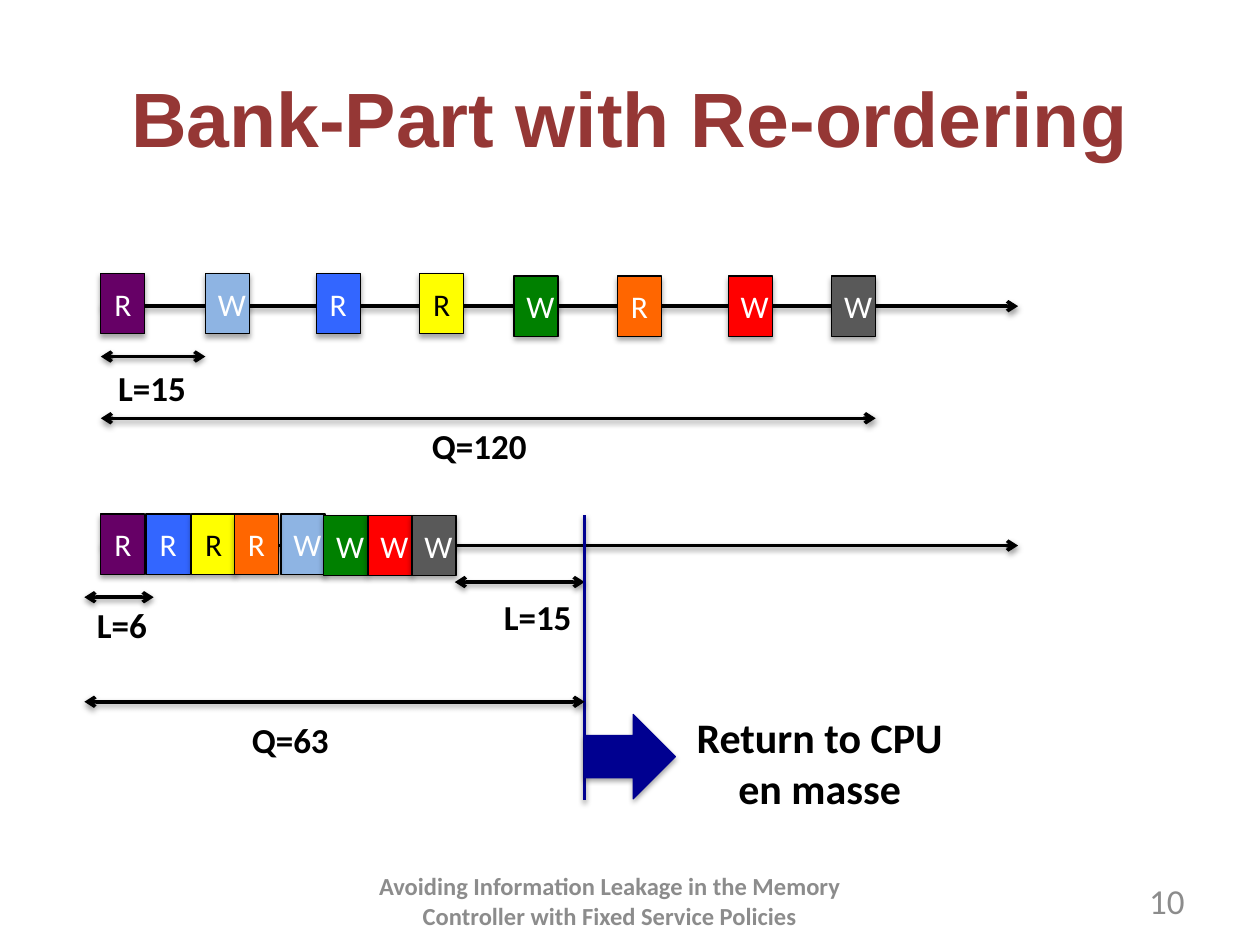
from dataclasses import dataclass
from typing import NamedTuple

from lxml.etree import SubElement
from pptx import Presentation
from pptx.dml.color import RGBColor
from pptx.enum.shapes import MSO_CONNECTOR, MSO_SHAPE
from pptx.enum.text import MSO_ANCHOR, PP_ALIGN
from pptx.oxml.ns import qn
from pptx.util import Inches, Pt


@dataclass(frozen=True)
class Theme:
    black: str = "000000"
    white: str = "FFFFFF"
    title: str = "953735"
    navy: str = "000090"
    gray: str = "8C8C8C"
    purple: str = "660066"
    sky: str = "8EB4E3"
    blue: str = "3366FF"
    yellow: str = "FFFF00"
    green: str = "008000"
    orange: str = "FF6600"
    red: str = "FF0000"
    slate: str = "595959"
    head: str = "Arial"
    body: str = "Calibri"
    title_size: int = 44
    call_size: int = 24
    label_size: int = 20
    slot_size: int = 18
    foot_size: int = 14


T = Theme()


class Slot(NamedTuple):
    x: float
    y: float
    mark: str
    fill: str
    ink: str = T.white


class Arrow(NamedTuple):
    x1: float
    y1: float
    x2: float
    y2: float
    ends: tuple = ("headEnd", "tailEnd")
    color: str = T.black


class Label(NamedTuple):
    x: float
    y: float
    w: float
    h: float
    text: str
    size: int = T.label_size
    color: str = T.black
    bold: bool = True
    align: PP_ALIGN = PP_ALIGN.LEFT
    anchor: MSO_ANCHOR = MSO_ANCHOR.TOP
    wrap: bool = False
    font: str = T.body


SLOT_W, SLOT_H = 0.35, 0.48
LEFT, START, END, RETURN = 0.8, 0.67, 8.08, 4.64
SPREAD_END = 6.95
SPREAD_Y, PACKED_Y = 2.43, 4.33

SPREAD = [
    Slot(LEFT, 2.17, "R", T.purple),
    Slot(1.63, 2.17, "W", T.sky),
    Slot(2.51, 2.17, "R", T.blue),
    Slot(3.33, 2.17, "R", T.yellow, T.black),
    Slot(4.08, 2.19, "W", T.green),
    Slot(4.9, 2.19, "R", T.orange),
    Slot(5.78, 2.19, "W", T.red),
    Slot(6.6, 2.19, "W", T.slate),
]
PACKED_AT = [(LEFT, 4.08), (2.23, 4.08), (1.16, 4.08), (1.52, 4.08),
             (2.57, 4.09), (1.86, 4.08), (2.92, 4.09), (3.27, 4.09)]
PACKED = [slot._replace(x=x, y=y) for slot, (x, y) in zip(SPREAD, PACKED_AT)]

SPANS = [
    Arrow(LEFT, 2.83, 1.63, 2.83),
    Arrow(LEFT, 3.32, SPREAD_END, 3.32),
    Arrow(START, 4.74, 1.22, 4.74),
    Arrow(3.61, 4.62, RETURN, 4.62),
    Arrow(RETURN, 4.09, RETURN, 6.35, (), T.navy),
    Arrow(START, 5.57, RETURN, 5.57),
]

LABELS = [
    Label(0.5, 0.3, 9, 1.25, "Bank-Part with Re-ordering", T.title_size, T.title,
          True, PP_ALIGN.CENTER, MSO_ANCHOR.MIDDLE, True, T.head),
    Label(0.84, 2.86, 0.74, 0.44, "L=15"),
    Label(3.33, 3.32, 0.96, 0.44, "Q=120"),
    Label(START, 4.74, 0.6, 0.44, "L=6"),
    Label(3.9, 4.68, 0.74, 0.44, "L=15"),
    Label(1.9, 5.65, 0.82, 0.44, "Q=63"),
    Label(5.41, 5.6, 2.19, 0.91, "Return to CPU\nen masse", T.call_size,
          align=PP_ALIGN.CENTER),
    Label(7.17, 6.95, 2.33, 0.4, "10", T.label_size, T.gray, False,
          PP_ALIGN.RIGHT, MSO_ANCHOR.MIDDLE, True),
    Label(2.86, 6.95, 3.96, 0.4,
          "Avoiding Information Leakage in the Memory Controller "
          "with Fixed Service Policies", T.foot_size, T.gray, True,
          PP_ALIGN.CENTER, MSO_ANCHOR.MIDDLE, True),
]


def rgb(color: str) -> RGBColor:
    return RGBColor.from_string(color)


def add_shadow(props, dist: float, alpha: int) -> None:
    effects = SubElement(props, qn("a:effectLst"))
    outer = SubElement(effects, qn("a:outerShdw"), blurRad=str(Pt(3.1)),
                       dist=str(Pt(dist)), dir="5400000", rotWithShape="0")
    tint = SubElement(outer, qn("a:srgbClr"), val=T.black)
    SubElement(tint, qn("a:alpha"), val=str(alpha * 1000))


def write(frame, label: Label) -> None:
    frame.text = label.text
    frame.word_wrap = label.wrap
    frame.vertical_anchor = label.anchor
    for para in frame.paragraphs:
        para.alignment = label.align
        font = para.font
        font.name, font.size, font.bold = label.font, Pt(label.size), label.bold
        font.color.rgb = rgb(label.color)


def draw_label(slide, label: Label) -> None:
    box = slide.shapes.add_textbox(*map(Inches, label[:4]))
    write(box.text_frame, label)


def draw_shape(slide, kind: MSO_SHAPE, x: float, y: float, w: float, h: float,
               fill: str, edge: str):
    shape = slide.shapes.add_shape(kind, *map(Inches, (x, y, w, h)))
    shape.fill.solid()
    shape.fill.fore_color.rgb = rgb(fill)
    shape.line.color.rgb = rgb(edge)
    shape.line.width = Pt(0.75)
    add_shadow(shape._element.spPr, 1.8, 35)
    return shape


def draw_slot(slide, slot: Slot) -> None:
    area = (slot.x, slot.y, SLOT_W, SLOT_H)
    shape = draw_shape(slide, MSO_SHAPE.RECTANGLE, *area, slot.fill, T.black)
    write(shape.text_frame, Label(*area, slot.mark, T.slot_size, slot.ink, False,
                                  PP_ALIGN.CENTER, MSO_ANCHOR.MIDDLE, True))


def draw_arrow(slide, arrow: Arrow) -> None:
    line = slide.shapes.add_connector(MSO_CONNECTOR.STRAIGHT,
                                      *map(Inches, arrow[:4]))
    line.line.color.rgb = rgb(arrow.color)
    line.line.width = Pt(2)
    props = line._element.spPr
    for end in arrow.ends:
        SubElement(props.find(qn("a:ln")), qn(f"a:{end}"), type="arrow")
    add_shadow(props, 1.6, 38)


def main() -> None:
    deck = Presentation()
    deck.slide_width, deck.slide_height = Inches(10), Inches(7.5)
    slide = deck.slides.add_slide(deck.slide_layouts[6])
    for y, row in ((SPREAD_Y, SPREAD), (PACKED_Y, PACKED)):
        draw_arrow(slide, Arrow(LEFT, y, END, y, ("tailEnd",)))
        for slot in row:
            draw_slot(slide, slot)
    for span in SPANS:
        draw_arrow(slide, span)
    draw_shape(slide, MSO_SHAPE.RIGHT_ARROW, RETURN, 5.67, 0.72, 0.67,
               T.navy, T.navy)
    for label in LABELS:
        draw_label(slide, label)
    deck.save("out.pptx")


if __name__ == "__main__":
    main()
